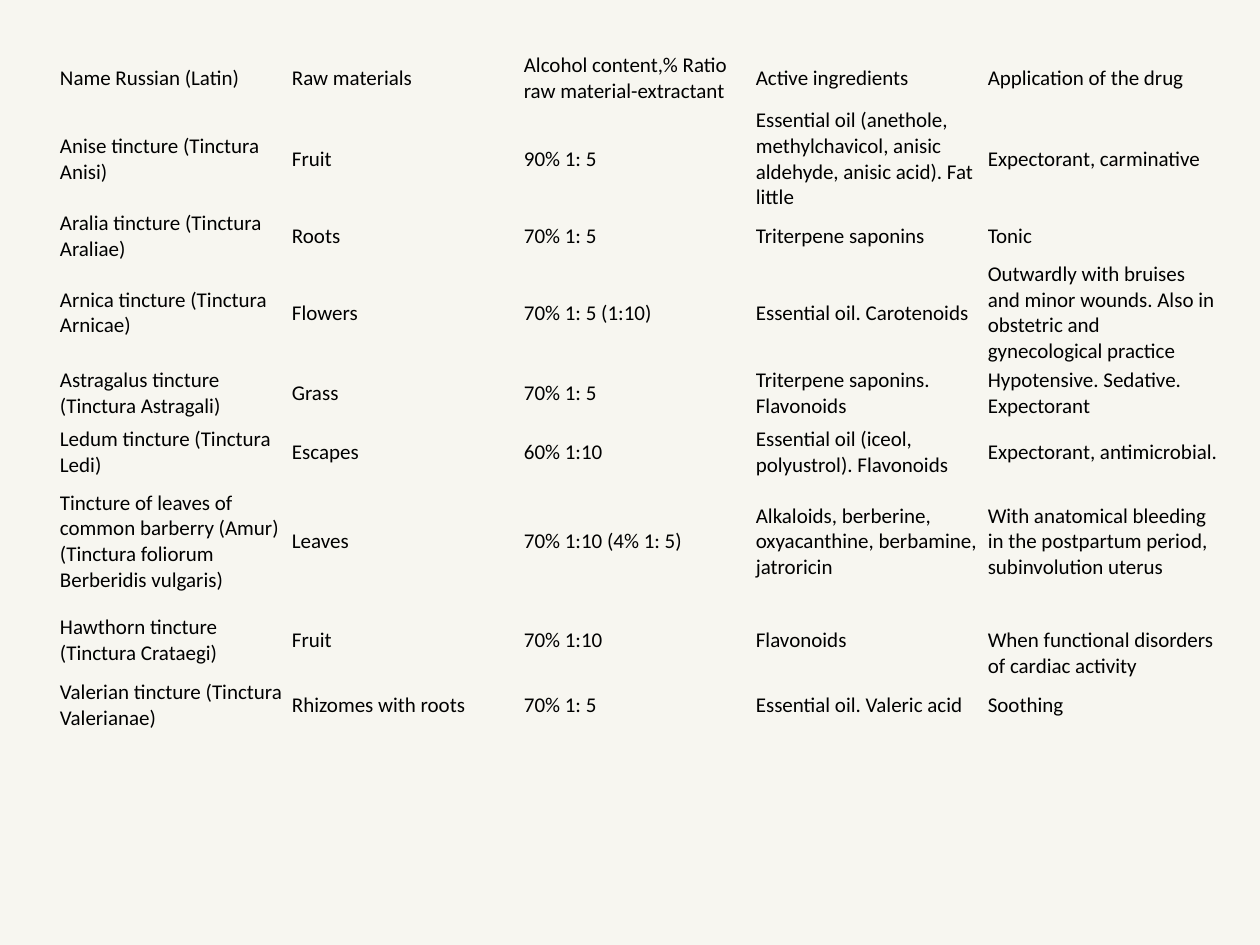
from pptx import Presentation
from pptx.dml.color import RGBColor
from pptx.enum.text import MSO_ANCHOR
from pptx.util import Emu, Pt

PX_PER_INCH = 126
BACKGROUND = RGBColor(0xF7, 0xF6, 0xF0)
BLACK = RGBColor(0, 0, 0)
FONT = "Calibri"
PLAIN_STYLE = "{2D5ABB26-0587-4C30-8999-92F81FD0307C}"

LEFT, TOP = 59, 49
COLUMN_WIDTH = 232
LINE_HEIGHT = 26
ROW_HEIGHTS = [59, 100, 40, 100, 59, 59, 119, 79, 40]
TINCTURES = [
    ("Name Russian (Latin)", "Raw materials",
     "Alcohol content,% Ratio raw material-extractant",
     "Active ingredients", "Application of the drug"),
    ("Anise tincture (Tinctura Anisi)", "Fruit", "90% 1: 5",
     "Essential oil (anethole, methylchavicol, anisic aldehyde, anisic acid). Fat little",
     "Expectorant, carminative"),
    ("Aralia tincture (Tinctura Araliae)", "Roots", "70% 1: 5",
     "Triterpene saponins", "Tonic"),
    ("Arnica tincture (Tinctura Arnicae)", "Flowers", "70% 1: 5 (1:10)",
     "Essential oil. Carotenoids",
     "Outwardly with bruises and minor wounds. Also in obstetric and gynecological practice"),
    ("Astragalus tincture (Tinctura Astragali)", "Grass", "70% 1: 5",
     "Triterpene saponins. Flavonoids", "Hypotensive. Sedative. Expectorant"),
    ("Ledum tincture (Tinctura Ledi)", "Escapes", "60% 1:10",
     "Essential oil (iceol, polyustrol). Flavonoids", "Expectorant, antimicrobial."),
    ("Tincture of leaves of common barberry (Amur) (Tinctura foliorum Berberidis vulgaris)",
     "Leaves", "70% 1:10 (4% 1: 5)",
     "Alkaloids, berberine, oxyacanthine, berbamine, jatroricin",
     "With anatomical bleeding in the postpartum period, subinvolution uterus"),
    ("Hawthorn tincture (Tinctura Crataegi)", "Fruit", "70% 1:10", "Flavonoids",
     "When functional disorders of cardiac activity"),
    ("Valerian tincture (Tinctura Valerianae)", "Rhizomes with roots", "70% 1: 5",
     "Essential oil. Valeric acid", "Soothing"),
]
HAWTHORN_ROW, APPLICATION_COLUMN = 7, 4


def px(n):
    return Emu(round(n * 914400 / PX_PER_INCH))


def set_cell(cell, text):
    cell.text = text
    cell.fill.background()
    cell.vertical_anchor = MSO_ANCHOR.MIDDLE
    cell.margin_left = cell.margin_right = px(1)
    cell.margin_top = cell.margin_bottom = 0
    font = cell.text_frame.paragraphs[0].font
    font.name = FONT
    font.size = Pt(12)
    font.color.rgb = BLACK


def add_tincture_table(s):
    rows, cols = len(TINCTURES), len(TINCTURES[0])
    sp = s.shapes.add_table(rows, cols, px(LEFT), px(TOP),
                            px(cols * COLUMN_WIDTH), px(sum(ROW_HEIGHTS)))
    sp.element.xpath(".//a:tableStyleId")[0].text = PLAIN_STYLE
    table = sp.table
    table.first_row = table.horz_banding = False
    for column in table.columns:
        column.width = px(COLUMN_WIDTH)
    for row, height, texts in zip(table.rows, ROW_HEIGHTS, TINCTURES):
        row.height = px(height)
        for cell, text in zip(row.cells, texts):
            set_cell(cell, text)
    table.cell(HAWTHORN_ROW, APPLICATION_COLUMN).margin_top = px(LINE_HEIGHT)


def main():
    prs = Presentation()
    prs.slide_width, prs.slide_height = px(1260), px(945)
    s = prs.slides.add_slide(prs.slide_layouts[6])
    s.background.fill.solid()
    s.background.fill.fore_color.rgb = BACKGROUND
    add_tincture_table(s)
    prs.save("out.pptx")


if __name__ == "__main__":
    main()
